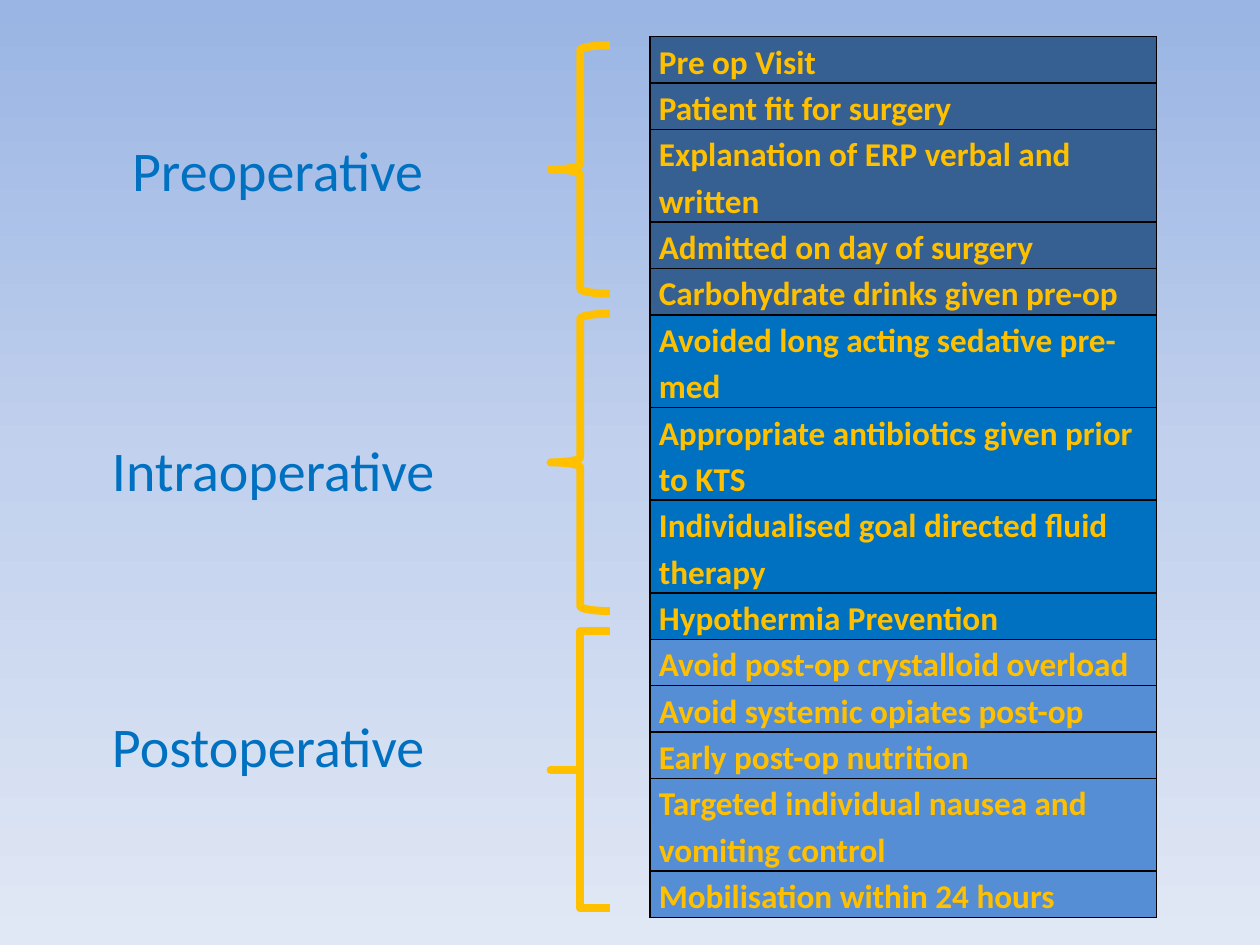
from copy import deepcopy

from lxml import etree
from pptx import Presentation
from pptx.dml.color import RGBColor
from pptx.enum.shapes import MSO_SHAPE
from pptx.oxml.ns import qn
from pptx.util import Inches, Pt

LEFT_BRACE = MSO_SHAPE.LEFT_BRACE
BLANK_LAYOUT = 6
GOLD, BLUE, BLACK = "FFC000", "0070C0", "000000"
BACKGROUND = [(0, "9AB5E4"), (0.5, "C2D1ED"), (1, "E1E8F5")]

# Phase: label position and width, brace top and height, row fill, items
PHASES = [
    ("Preoperative", (0.95, 1.03, 2.6), (0.36, 1.97), "376092", [
        "Pre op Visit",
        "Patient fit for surgery",
        "Explanation of ERP verbal and written",
        "Admitted on day of surgery",
        "Carbohydrate drinks given pre-op",
    ]),
    ("Intraoperative", (0.79, 3.41, 2.92), (2.49, 2.36), BLUE, [
        "Avoided long acting sedative pre-med",
        "Appropriate antibiotics given prior to KTS",
        "Individualised goal directed fluid therapy",
        "Hypothermia Prevention",
    ]),
    ("Postoperative", (0.79, 5.6, 2.92), (5.01, 2.2), "558ED5", [
        "Avoid post-op crystalloid overload",
        "Avoid systemic opiates post-op",
        "Early post-op nutrition",
        "Targeted individual nausea and vomiting control",
        "Mobilisation within 24 hours",
    ]),
]
ROW_HEIGHT = 0.34
SPECIAL_HEIGHTS = {"Patient fit for surgery": 0.29,
                   "Targeted individual nausea and vomiting control": 0.59}


def color(value):
    return RGBColor.from_string(value)


def apply(target, values):
    for name, value in values.items():
        setattr(target, name, value)


class PathwaySlide:
    label_font = {"name": "Calibri", "size": Pt(32)}
    item_font = {"name": "Calibri", "size": Pt(19), "bold": True}
    item_spacing = {"line_spacing": 1.15, "space_after": Pt(10)}
    cell_margins = {"margin_left": Inches(0.07), "margin_right": Inches(0.07),
                    "margin_top": 0, "margin_bottom": 0}

    def __init__(self, slide):
        self.slide = slide

    def background(self, stops):
        fill = self.slide.background.fill
        fill.gradient()
        fill.gradient_angle = 270
        stop_list = self.slide.element.find(".//" + qn("a:gsLst"))
        stop_list.append(deepcopy(stop_list[0]))
        for stop, (position, value) in zip(fill.gradient_stops, stops):
            stop.position = position
            stop.color.rgb = color(value)

    def text_run(self, paragraph, text, font, value):
        run = paragraph.add_run()
        run.text = text
        apply(run.font, font)
        run.font.color.rgb = color(value)

    def label(self, text, left, top, width):
        box = self.slide.shapes.add_textbox(
            Inches(left), Inches(top), Inches(width), Inches(0.64))
        box.text_frame.word_wrap = True
        self.text_run(box.text_frame.paragraphs[0], text, self.label_font, BLUE)

    def brace(self, top, height, square=False):
        brace = self.slide.shapes.add_shape(
            LEFT_BRACE, Inches(4.37), Inches(top), Inches(0.47), Inches(height))
        brace.shadow.inherit = False
        brace.fill.background()
        brace.line.color.rgb = color(GOLD)
        brace.line.width = Pt(4.5)
        if square:
            brace.adjustments[0] = 0

    def borders(self, cell):
        properties = cell._tc.get_or_add_tcPr()
        for side in ("lnL", "lnR", "lnT", "lnB"):
            line = etree.SubElement(properties, qn(f"a:{side}"), w=str(Pt(1)))
            fill = etree.SubElement(line, qn("a:solidFill"))
            etree.SubElement(fill, qn("a:srgbClr"), val=BLACK)

    def checklist(self, items):
        frame = self.slide.shapes.add_table(
            len(items), 1, Inches(5.16), Inches(0.29), Inches(4.02), Inches(6.92))
        table = frame.table
        apply(table, {"first_row": False, "horz_banding": False})
        for row, (text, fill) in zip(table.rows, items):
            row.height = Inches(SPECIAL_HEIGHTS.get(text, ROW_HEIGHT))
            cell = row.cells[0]
            apply(cell, self.cell_margins)
            self.borders(cell)
            cell.fill.solid()
            cell.fill.fore_color.rgb = color(fill)
            paragraph = cell.text_frame.paragraphs[0]
            apply(paragraph, self.item_spacing)
            self.text_run(paragraph, text, self.item_font, GOLD)
        frame.height = Inches(6.92)


def main():
    deck = Presentation()
    apply(deck, {"slide_width": Inches(10), "slide_height": Inches(7.5)})
    pathway = PathwaySlide(deck.slides.add_slide(deck.slide_layouts[BLANK_LAYOUT]))
    pathway.background(BACKGROUND)

    # Checklist of all phases
    pathway.checklist([(item, fill) for *_, fill, items in PHASES for item in items])

    # Phase names and the braces that group their rows
    for phase, place, span, _, _ in PHASES:
        pathway.label(phase, *place)
        pathway.brace(*span, square=phase == "Postoperative")

    deck.save("out.pptx")


if __name__ == "__main__":
    main()
